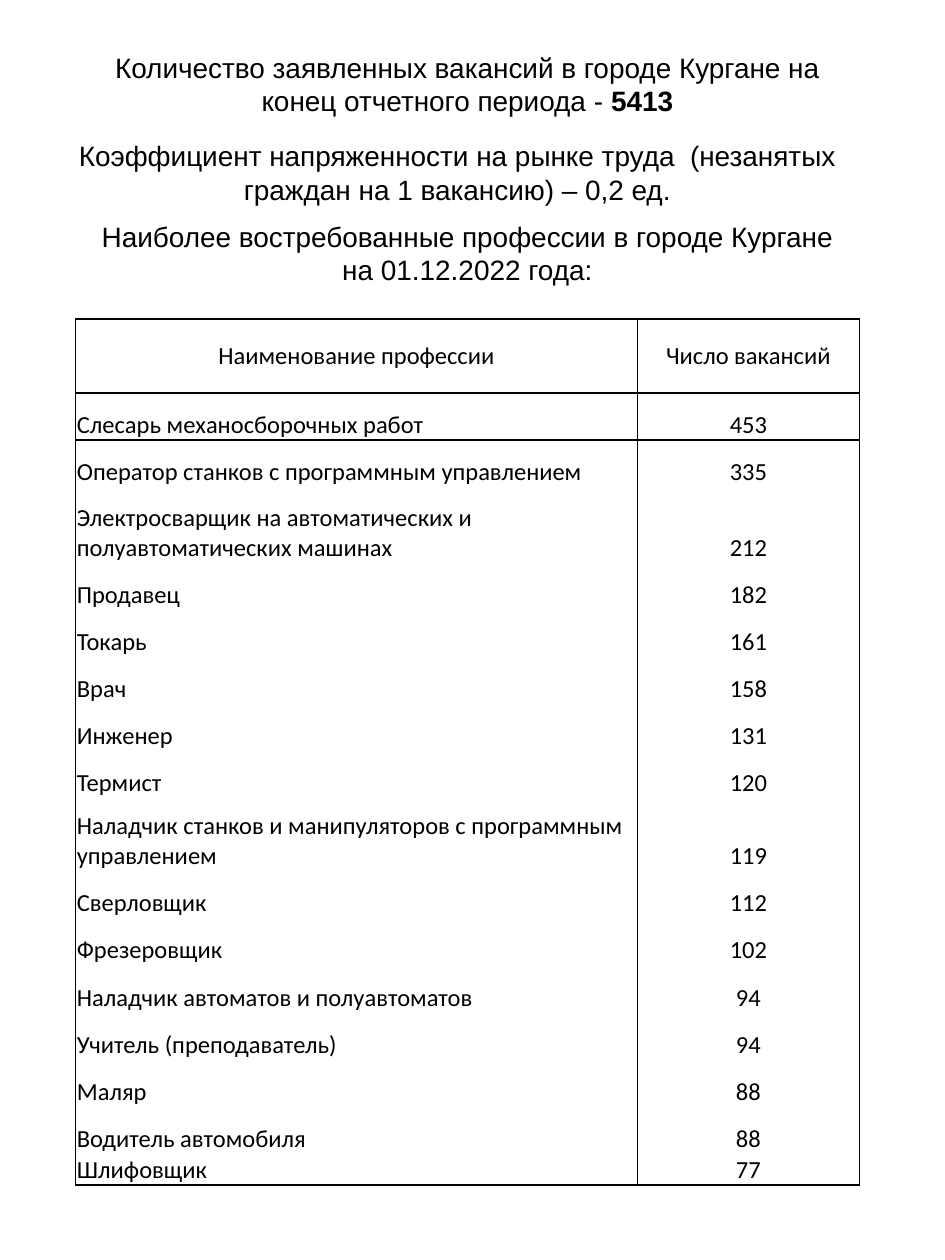
from dataclasses import dataclass

from lxml import etree
from pptx import Presentation
from pptx.dml.color import RGBColor
from pptx.enum.text import MSO_ANCHOR, MSO_AUTO_SIZE, PP_ALIGN
from pptx.oxml.ns import qn
from pptx.util import Inches, Pt

CENTER, LEFT = PP_ALIGN.CENTER, PP_ALIGN.LEFT
TOP, MIDDLE, BOTTOM = MSO_ANCHOR.TOP, MSO_ANCHOR.MIDDLE, MSO_ANCHOR.BOTTOM
FIT_SHAPE = MSO_AUTO_SIZE.SHAPE_TO_FIT_TEXT
TITLE_ONLY = 5


@dataclass(frozen=True)
class Theme:
    ink: str = "000000"
    heading_font: str = "Arial"
    heading_size: int = 16
    table_font: str = "Calibri"
    table_size: int = 14
    border: int = 1


THEME = Theme()

HEADER = ("Наименование профессии", "Число вакансий")
VACANCIES = [
    ("Слесарь механосборочных работ", 453),
    ("Оператор станков с программным управлением", 335),
    ("Электросварщик на автоматических и полуавтоматических машинах", 212),
    ("Продавец", 182),
    ("Токарь", 161),
    ("Врач", 158),
    ("Инженер", 131),
    ("Термист", 120),
    ("Наладчик станков и манипуляторов с программным управлением", 119),
    ("Сверловщик", 112),
    ("Фрезеровщик", 102),
    ("Наладчик автоматов и полуавтоматов", 94),
    ("Учитель (преподаватель)", 94),
    ("Маляр", 88),
    ("Водитель автомобиля", 88),
    ("Шлифовщик", 77),
]

TABLE_HEIGHT = 6.88
COLUMN_WIDTHS = (4.46, 1.76)
# Header, two-line and last rows; the other rows share what is left
SPECIAL_ROWS = {0: 0.59, 3: 0.6, 9: 0.58, 16: 0.25}


def set_font(p, name, size):
    p.font.name = name
    p.font.size = Pt(size)
    p.font.color.rgb = RGBColor.from_string(THEME.ink)


def write_heading(sp, left, top, width, text, bold_text=""):
    sp.left, sp.top = Inches(left), Inches(top)
    sp.width, sp.height = Inches(width), Inches(0.64)
    tf = sp.text_frame
    tf.word_wrap = True
    tf.auto_size = FIT_SHAPE
    tf.vertical_anchor = TOP
    p = tf.paragraphs[0]
    p.alignment = CENTER
    set_font(p, THEME.heading_font, THEME.heading_size)
    p.add_run().text = text
    if bold_text:
        r = p.add_run()
        r.text = bold_text
        r.font.bold = True


def add_heading(slide, left, top, width, text):
    sp = slide.shapes.add_textbox(0, 0, 0, 0)
    write_heading(sp, left, top, width, text)


def set_borders(cell, sides):
    tc_pr = cell._tc.get_or_add_tcPr()
    for side in "LRTB":
        ln = etree.SubElement(tc_pr, qn(f"a:ln{side}"), w=str(Pt(THEME.border)))
        if side in sides:
            fill = etree.SubElement(ln, qn("a:solidFill"))
            etree.SubElement(fill, qn("a:srgbClr"), val=THEME.ink)
        else:
            etree.SubElement(ln, qn("a:noFill"))


def write_cell(cell, text, alignment, anchor, sides):
    cell.margin_left = cell.margin_right = cell.margin_top = Inches(0.01)
    cell.margin_bottom = 0
    cell.vertical_anchor = anchor
    p = cell.text_frame.paragraphs[0]
    p.text = text
    p.alignment = alignment
    set_font(p, THEME.table_font, THEME.table_size)
    set_borders(cell, sides)
    cell.fill.background()


def add_vacancy_table(slide):
    rows = [HEADER, *VACANCIES]
    last = len(rows) - 1
    frame = slide.shapes.add_table(
        len(rows), len(HEADER), Inches(0.6), Inches(2.53),
        Inches(sum(COLUMN_WIDTHS)), Inches(TABLE_HEIGHT))
    table = frame.table
    table.first_row = table.horz_banding = False
    for column, width in zip(table.columns, COLUMN_WIDTHS):
        column.width = Inches(width)

    plain_height = ((TABLE_HEIGHT - sum(SPECIAL_ROWS.values()))
                    / (len(rows) - len(SPECIAL_ROWS)))
    # Horizontal rules: around the header, under the first row, at the end
    rules = {0: "TB", 1: "TB", 2: "T", last: "B"}
    for i, row in enumerate(rows):
        table.rows[i].height = Inches(SPECIAL_ROWS.get(i, plain_height))
        for j, value in enumerate(row):
            alignment = LEFT if i and j == 0 else CENTER
            anchor = BOTTOM if i else MIDDLE
            write_cell(table.cell(i, j), str(value), alignment, anchor,
                       "LR" + rules.get(i, ""))


def main():
    prs = Presentation()
    prs.slide_width, prs.slide_height = Inches(7.5), Inches(10)
    slide = prs.slides.add_slide(prs.slide_layouts[TITLE_ONLY])

    # Headings
    write_heading(
        slide.shapes.title, 0.68, 0.35, 6.06,
        "Количество заявленных вакансий в городе Кургане на конец "
        "отчетного периода - ", "5413")
    add_heading(
        slide, 0.52, 1.05, 6.22,
        "Коэффициент напряженности на рынке труда  (незанятых граждан "
        "на 1 вакансию) – 0,2 ед.")
    add_heading(
        slide, 0.68, 1.69, 6.06,
        "Наиболее востребованные профессии в городе Кургане "
        "на 01.12.2022 года:")

    # Most wanted professions
    add_vacancy_table(slide)

    prs.save("out.pptx")


if __name__ == "__main__":
    main()
